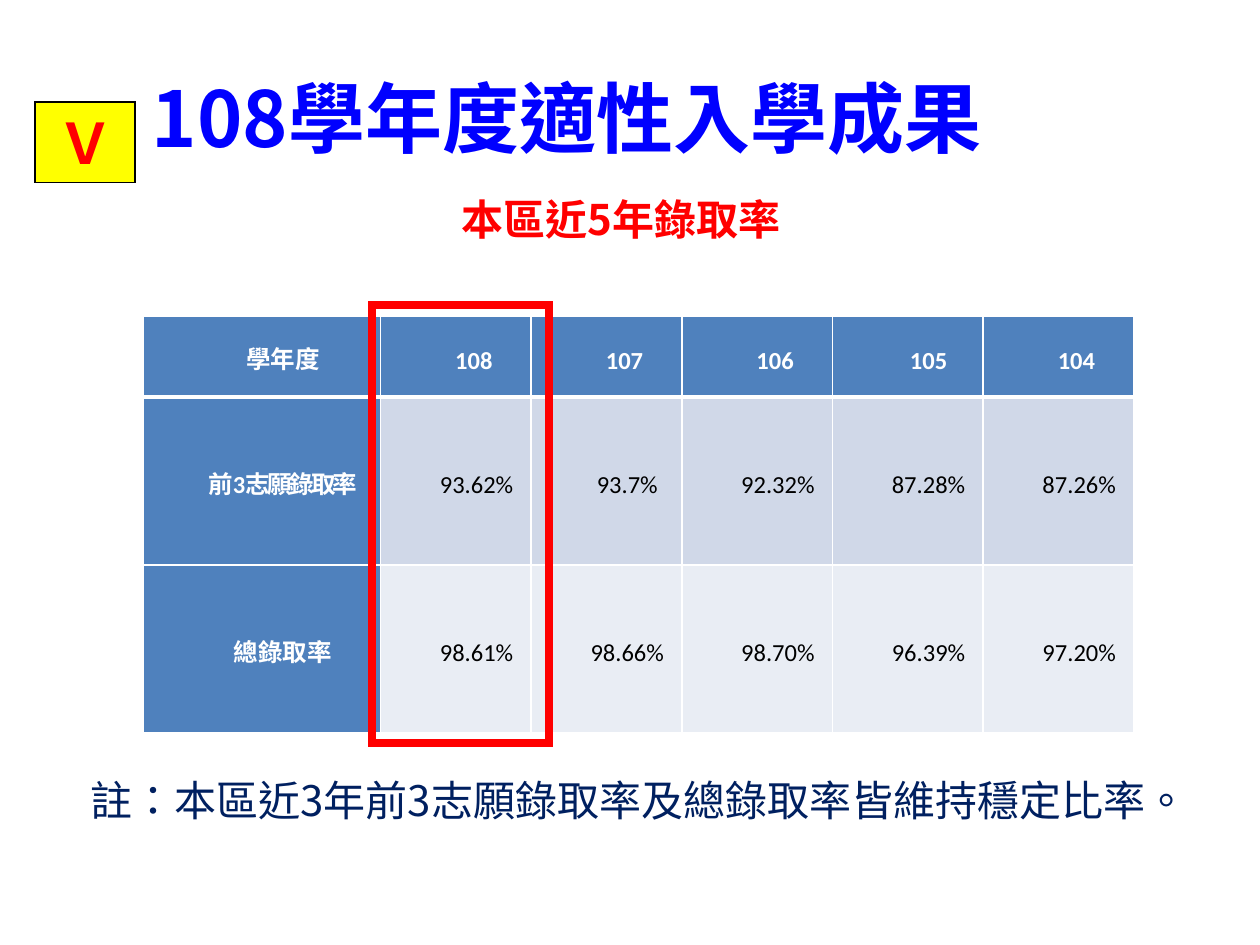
import dataclasses

import pptx
import pptx.dml.color
import pptx.enum.shapes
import pptx.enum.text
import pptx.oxml
import pptx.oxml.ns
import pptx.util

Inches = pptx.util.Inches
Pt = pptx.util.Pt


@dataclasses.dataclass(frozen=True)
class Theme:
    heading_font: str = "Noto Sans CJK SC"
    marker_font: str = "Noto Sans CJK TC"
    table_font: str = "Calibri"
    title_size: int = 44
    marker_size: int = 32
    body_size: int = 24
    table_size: int = 14
    blue: str = "0000FF"
    red: str = "FF0000"
    navy: str = "002060"
    yellow: str = "FFFF00"
    black: str = "000000"
    white: str = "FFFFFF"
    header_fill: str = "4F81BD"
    band_fills: tuple = ("D0D8E8", "E9EDF4")


THEME = Theme()

RATES = [
    ["學年度", "108 ", "107 ", "106 ", "105", "104 "],
    ["前3志願錄取率", "93.62%", "93.7%", "92.32%", "87.28%", "87.26%"],
    ["總錄取率", "98.61%", "98.66%", "98.70%", "96.39%", "97.20%"],
]


def rgb(color):
    return pptx.dml.color.RGBColor.from_string(color)


def write_text(frame, text, size, color, font, bold=False, east_asian=None):
    frame.vertical_anchor = pptx.enum.text.MSO_ANCHOR.MIDDLE
    frame.word_wrap = True
    paragraph = frame.paragraphs[0]
    paragraph.text = text
    paragraph.alignment = pptx.enum.text.PP_ALIGN.CENTER
    paragraph._p.get_or_add_pPr().set("hangingPunct", "0")
    run = paragraph.runs[0]
    run.font.size = Pt(size)
    run.font.bold = bold
    run.font.color.rgb = rgb(color)
    run.font.name = font
    run.font._element.set("lang", "zh-TW")
    ea = pptx.oxml.parse_xml(f'<a:ea {pptx.oxml.ns.nsdecls("a")} typeface="{east_asian or font}"/>')
    run.font._element.append(ea)
    return paragraph


def add_line_of_text(slide, text, left, top, height, size, color, bold):
    box = slide.shapes.add_textbox(Inches(left), Inches(top), Inches(9), Inches(height))
    write_text(box.text_frame, text, size, color, THEME.heading_font, bold)


def add_rectangle(slide, left, top, width, height, line_color, line_width, fill=None):
    rectangle = slide.shapes.add_shape(
        pptx.enum.shapes.MSO_SHAPE.RECTANGLE,
        Inches(left), Inches(top), Inches(width), Inches(height))
    rectangle.shadow.inherit = False
    if fill:
        rectangle.fill.solid()
        rectangle.fill.fore_color.rgb = rgb(fill)
    else:
        rectangle.fill.background()
    rectangle.line.color.rgb = rgb(line_color)
    rectangle.line.width = Pt(line_width)
    miter = pptx.oxml.parse_xml(f'<a:miter {pptx.oxml.ns.nsdecls("a")} lim="800000"/>')
    rectangle.line._get_or_add_ln().append(miter)
    return rectangle


def set_borders(cell, is_header, below_header):
    widths = {"L": 1, "R": 1, "T": 3 if below_header else 1, "B": 3 if is_header else 1}
    properties = cell._tc.get_or_add_tcPr()
    for position, (side, width) in enumerate(widths.items()):
        border = pptx.oxml.parse_xml(
            f'<a:ln{side} {pptx.oxml.ns.nsdecls("a")} w="{Pt(width)}"><a:solidFill>'
            f'<a:srgbClr val="{THEME.white}"/></a:solidFill></a:ln{side}>')
        properties.insert(position, border)


def fill_cell(cell, text, row, column):
    is_label = row == 0 or column == 0
    cell.fill.solid()
    cell.fill.fore_color.rgb = rgb(THEME.header_fill if is_label else THEME.band_fills[row - 1])
    set_borders(cell, row == 0, row == 1)
    cell.margin_left = cell.margin_right = Inches(0.07)
    cell.margin_top = cell.margin_bottom = 0
    cell.vertical_anchor = pptx.enum.text.MSO_ANCHOR.MIDDLE
    paragraph = write_text(
        cell.text_frame, text, THEME.table_size,
        THEME.white if is_label else THEME.black,
        THEME.table_font, is_label, THEME.heading_font)
    paragraph.line_spacing = Pt(22)
    paragraph._p.get_or_add_pPr().set("marL", str(Inches(0.33)))
    paragraph._p.get_or_add_pPr().set("indent", "0")
    if (row, column) == (1, 0):
        paragraph.runs[0].font._element.set("spc", "-150")


def add_rate_table(slide):
    width, height = 7.86, 3.31
    label_width, header_height = 1.88, 0.64
    years, measures = len(RATES[0]) - 1, len(RATES) - 1
    column_widths = [label_width] + [(width - label_width) / years] * years
    row_heights = [header_height] + [(height - header_height) / measures] * measures
    table = slide.shapes.add_table(
        len(row_heights), len(column_widths), Inches(1.14), Inches(2.51),
        Inches(width), Inches(height)).table
    for column, column_width in zip(table.columns, column_widths):
        column.width = Inches(column_width)
    for row, row_height in zip(table.rows, row_heights):
        row.height = Inches(row_height)
    for row, rates in enumerate(RATES):
        for column, text in enumerate(rates):
            fill_cell(table.cell(row, column), text, row, column)


def main():
    presentation = pptx.Presentation()
    presentation.slide_width = Inches(10)
    presentation.slide_height = Inches(7.5)
    slide = presentation.slides.add_slide(presentation.slide_layouts[6])

    add_line_of_text(slide, "108學年度適性入學成果", 0, 0.3, 1.25,
                     THEME.title_size, THEME.blue, True)
    add_line_of_text(slide, "本區近5年錄取率", 0.43, 1.41, 0.65,
                     THEME.body_size, THEME.red, True)
    add_line_of_text(slide, "註：本區近3年前3志願錄取率及總錄取率皆維持穩定比率。",
                     0.57, 6.02, 0.65, THEME.body_size, THEME.navy, False)
    add_rate_table(slide)
    add_rectangle(slide, 2.95, 2.42, 1.41, 3.48, THEME.red, 4.5)
    marker = add_rectangle(slide, 0.28, 0.81, 0.79, 0.64, THEME.black, 1, THEME.yellow)
    write_text(marker.text_frame, "Ｖ", THEME.marker_size, THEME.red, THEME.marker_font, True)

    presentation.save("out.pptx")


if __name__ == "__main__":
    main()
